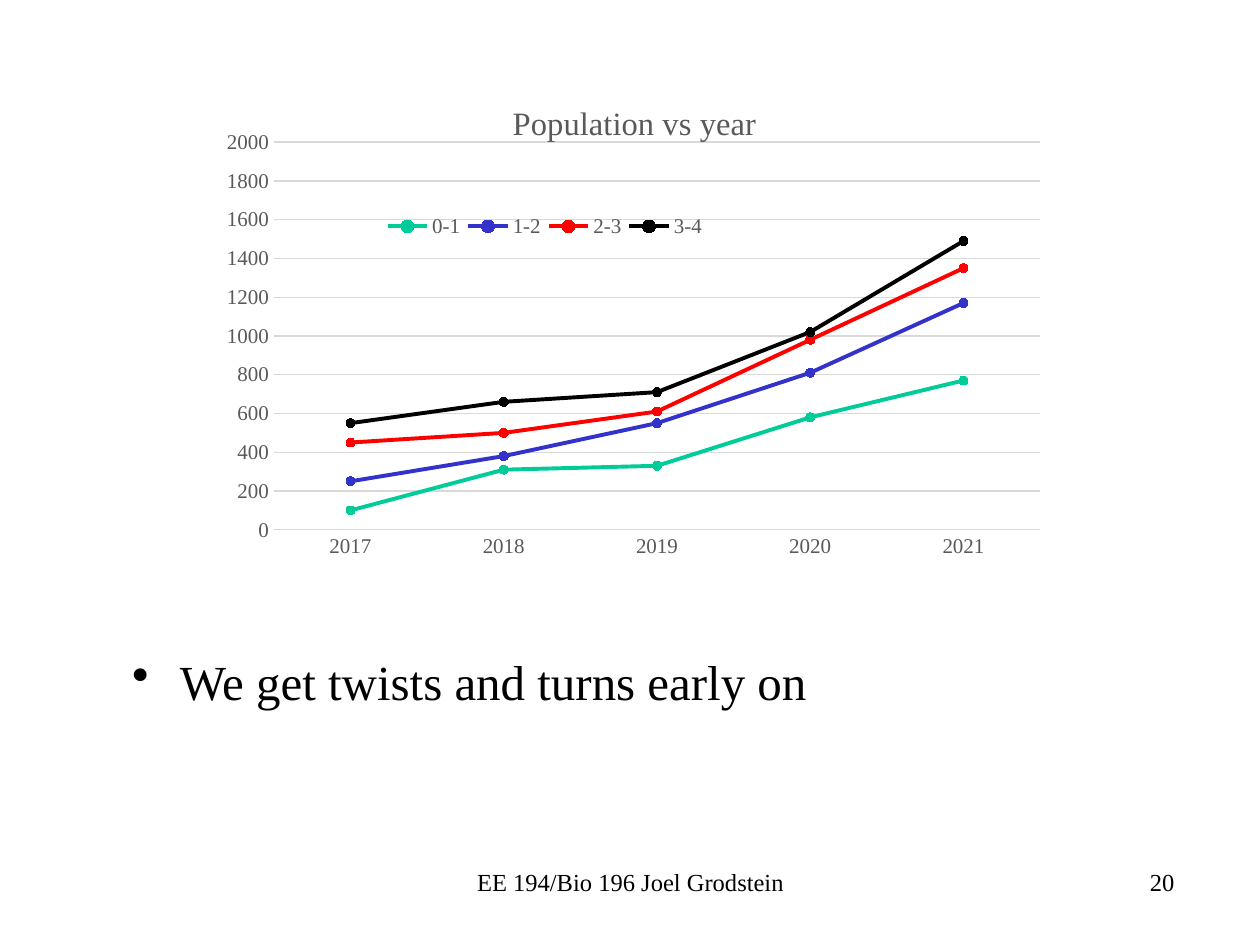
from lxml import etree
from pptx import Presentation
from pptx.chart.data import CategoryChartData
from pptx.dml.color import RGBColor
from pptx.enum.chart import XL_CHART_TYPE, XL_LEGEND_POSITION, XL_MARKER_STYLE, XL_TICK_MARK
from pptx.enum.text import PP_ALIGN
from pptx.oxml.ns import qn
from pptx.util import Inches, Pt

STACKED_LINES = XL_CHART_TYPE.LINE_MARKERS_STACKED
LEGEND_BOTTOM = XL_LEGEND_POSITION.BOTTOM
CIRCLE = XL_MARKER_STYLE.CIRCLE
NO_TICKS = XL_TICK_MARK.NONE
LEFT, CENTER, RIGHT = PP_ALIGN.LEFT, PP_ALIGN.CENTER, PP_ALIGN.RIGHT

FONT = "Times New Roman"
BLACK, GRAY, GRID = "000000", "595959", "D9D9D9"
YEARS = ["2017", "2018", "2019", "2020", "2021"]
AGE_GROUPS = [
    ("0-1", "00CC99", [100, 310, 330, 580, 770]),
    ("1-2", "3333CC", [150, 70, 220, 230, 400]),
    ("2-3", "FF0000", [200, 120, 60, 170, 180]),
    ("3-4", BLACK, [100, 160, 100, 40, 140]),
]


def rgb(value):
    """Turn a hex string into a colour."""
    return RGBColor.from_string(value)


def style_font(font, size, color):
    """Set typeface, size and colour."""
    font.name = FONT
    font.size = Pt(size)
    font.color.rgb = rgb(color)


def style_line(line, color, width):
    """Set a line's colour and width in points."""
    line.color.rgb = rgb(color)
    line.width = Pt(width)


def add_text(slide, text, left, top, width, height, size, align):
    """Add a one-paragraph text box and return its paragraph."""
    box = slide.shapes.add_textbox(Inches(left), Inches(top), Inches(width), Inches(height))
    box.text_frame.word_wrap = True
    paragraph = box.text_frame.paragraphs[0]
    paragraph.alignment = align
    run = paragraph.add_run()
    run.text = text
    style_font(run.font, size, BLACK)
    return paragraph


def add_bullet(paragraph, indent):
    """Give a paragraph a hanging round bullet."""
    properties = paragraph._p.get_or_add_pPr()
    properties.set("marL", str(Inches(indent)))
    properties.set("indent", str(-Inches(indent)))
    etree.SubElement(properties, qn("a:buChar")).set("char", "•")


def place_part(part, index, **fractions):
    """Place a chart part by fractions of the chart's size."""
    for old_layout in part.findall(qn("c:layout")):
        part.remove(old_layout)
    layout = etree.Element(qn("c:layout"))
    part.insert(index, layout)
    manual = etree.SubElement(layout, qn("c:manualLayout"))
    settings = {"xMode": "edge", "yMode": "edge", **fractions}
    if part.tag == qn("c:plotArea"):
        settings = {"layoutTarget": "inner", **settings}
    for name, value in settings.items():
        etree.SubElement(manual, qn(f"c:{name}")).set("val", str(value))


def style_axes(chart):
    """Style the year axis, the population axis and the gridlines."""
    for axis in (chart.category_axis, chart.value_axis):
        axis.major_tick_mark = axis.minor_tick_mark = NO_TICKS
        style_font(axis.tick_labels.font, 12, GRAY)
    style_line(chart.category_axis.format.line, GRID, 0.75)
    population = chart.value_axis
    population.minimum_scale, population.maximum_scale = 0, 2000
    population.major_unit = 200
    population.format.line.fill.background()
    style_line(population.major_gridlines.format.line, GRID, 0.75)


def style_series(series, color):
    """Give one age group its line and round markers."""
    series.smooth = False
    style_line(series.format.line, color, 2.25)
    series.marker.style = CIRCLE
    series.marker.size = 5
    series.marker.format.fill.solid()
    series.marker.format.fill.fore_color.rgb = rgb(color)
    style_line(series.marker.format.line, color, 0.75)


def add_title(chart, text):
    """Add the chart title above the plot."""
    chart.has_title = True
    title = chart.chart_title
    run = title.text_frame.paragraphs[0].add_run()
    run.text = text
    style_font(run.font, 18.6, GRAY)
    run.font.bold = False
    title.include_in_layout = False
    place_part(title._element, 1, x=0.35, y=0.09)


def add_legend(chart):
    """Add the legend inside the plot."""
    chart.has_legend = True
    legend = chart.legend
    legend.position = LEGEND_BOTTOM
    legend.include_in_layout = False
    style_font(legend.font, 12, GRAY)
    place_part(legend._element, 1, x=0.2, y=0.28, w=0.39, h=0.08)


def add_population_chart(slide):
    """Add the stacked line chart of population by age group."""
    data = CategoryChartData()
    data.categories = YEARS
    for name, _, values in AGE_GROUPS:
        data.add_series(name, values)
    chart = slide.shapes.add_chart(
        STACKED_LINES, Inches(1.67), Inches(0.37), Inches(6.72), Inches(4.46), data
    ).chart
    style_font(chart.font, 10, BLACK)
    plot = chart.plots[0]
    plot.vary_by_categories = False
    for series, (_, color, _) in zip(plot.series, AGE_GROUPS):
        style_series(series, color)
    style_axes(chart)
    add_title(chart, "Population vs year")
    add_legend(chart)
    plot_area = chart._chartSpace.find(f".//{qn('c:plotArea')}")
    place_part(plot_area, 0, x=0.075, y=0.17, w=0.905, h=0.69)


def main():
    """Build and save the slide."""
    deck = Presentation()
    deck.slide_width, deck.slide_height = Inches(10), Inches(7.5)
    slide = deck.slides.add_slide(deck.slide_layouts[6])
    add_text(slide, "20", 6.25, 6.83, 3.17, 0.5, 14, RIGHT)
    remark = add_text(slide, "We get twists and turns early on", 0.95, 5.12, 8.22, 1.14, 28, LEFT)
    remark.space_before = Pt(4)
    add_bullet(remark, 0.38)
    add_text(slide, "EE 194/Bio 196 Joel Grodstein", 3.42, 6.83, 3.17, 0.5, 14, CENTER)
    add_population_chart(slide)
    deck.save("out.pptx")


if __name__ == "__main__":
    main()
